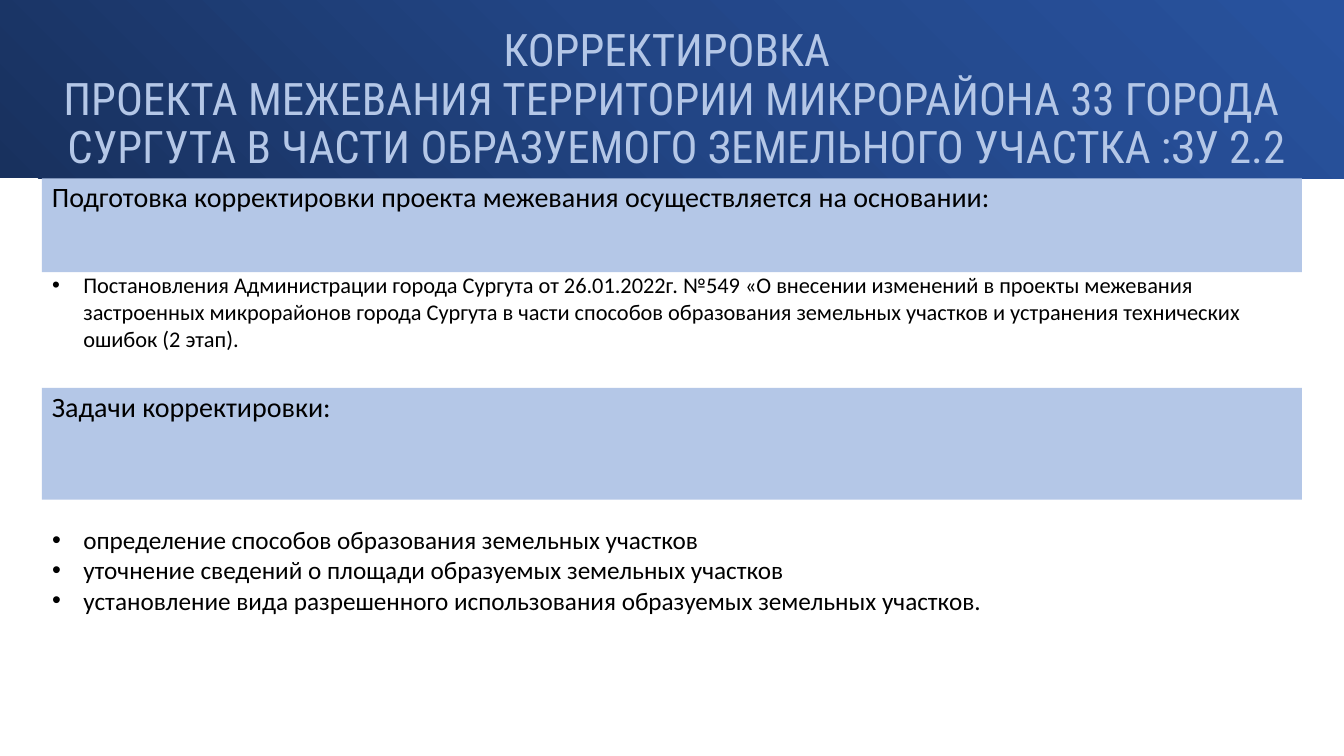
from copy import deepcopy

from pptx import Presentation
from pptx.dml.color import RGBColor
from pptx.enum.shapes import MSO_SHAPE
from pptx.enum.text import MSO_ANCHOR, MSO_AUTO_SIZE, PP_ALIGN
from pptx.util import Inches, Pt

RECT = MSO_SHAPE.RECTANGLE
TOP, BOTTOM = MSO_ANCHOR.TOP, MSO_ANCHOR.BOTTOM
LEFT, CENTER = PP_ALIGN.LEFT, PP_ALIGN.CENTER
FIXED, GROW = MSO_AUTO_SIZE.NONE, MSO_AUTO_SIZE.SHAPE_TO_FIT_TEXT

COLS, ROWS = 32, 100
INDENT = Inches(0.31)
HEX = {"dark": "18315E", "mid": "224585", "light": "28529E",
       "pale": "B4C7E7", "ink": "000000"}

# Format values for each kind of text
HEAD = {"frame": {"vertical_anchor": BOTTOM, "auto_size": FIXED},
        "para": {"alignment": CENTER, "line_spacing": 0.9},
        "font": {"name": "Roboto Condensed", "size": Pt(32)}, "color": "pale"}
BAR = {"frame": {"vertical_anchor": TOP, "auto_size": FIXED},
       "para": {"alignment": LEFT, "line_spacing": 0.9, "space_before": Pt(10)},
       "font": {"name": "Calibri", "size": Pt(20)}, "color": "ink"}
LIST = {"frame": {"vertical_anchor": TOP, "auto_size": GROW},
        "para": {"alignment": LEFT, "line_spacing": 1.0, "space_before": Pt(0)},
        "font": {"name": "Calibri"}, "color": "ink"}


def apply(obj, values):
    for key, value in values.items():
        setattr(obj, key, value)


def rgb(name):
    return RGBColor.from_string(HEX[name])


class Deck:
    def __init__(self):
        self.prs = Presentation()
        self.prs.slide_width = Inches(13.33)
        self.prs.slide_height = Inches(7.5)
        self.col = self.prs.slide_width / COLS
        self.row = self.prs.slide_height / ROWS
        self.slide = self.prs.slides.add_slide(self.prs.slide_layouts[3])
        self.title, *self.bodies = self.slide.placeholders

    def box(self, x, y, w, h):
        return (int(x * self.col), int(y * self.row),
                int(w * self.col), int(h * self.row))

    def place(self, shape, cells):
        sides = ("left", "top", "width", "height")
        apply(shape, dict(zip(sides, self.box(*cells))))
        # Stack in the order of placing
        self.slide.shapes._spTree.append(shape._element)

    def text(self, shape, words, style):
        frame = shape.text_frame
        frame.text = words
        frame.word_wrap = True
        apply(frame, style["frame"])
        for para in frame.paragraphs:
            apply(para, style["para"])
            for run in para.runs:
                apply(run.font, style["font"])
                run.font.color.rgb = rgb(style["color"])

    def head(self, cells, words, colors):
        self.place(self.title, cells)
        self.text(self.title, words, HEAD)
        fill = self.title.fill
        fill.gradient()
        fill.gradient_angle = 45
        # A third stop between the two default ones
        first = self.title._element.spPr.xpath(".//a:gs")[0]
        first.addnext(deepcopy(first))
        for i, (stop, name) in enumerate(zip(fill.gradient_stops, colors)):
            stop.position = i / 2
            stop.color.rgb = rgb(name)

    def bar(self, cells, words):
        shape = self.slide.shapes.add_shape(RECT, *self.box(*cells))
        shape.shadow.inherit = False
        shape.fill.solid()
        shape.fill.fore_color.rgb = rgb("pale")
        shape.line.fill.background()
        self.text(shape, words, BAR)

    def list(self, cells, items, size):
        body = self.bodies.pop(0)
        self.place(body, cells)
        self.text(body, "\n".join(items), LIST)
        for para in body.text_frame.paragraphs:
            para.font.size = Pt(size)
            for run in para.runs:
                run.font.size = Pt(size)
            props = para._p.get_or_add_pPr()
            props.set("marL", str(INDENT))
            props.set("indent", str(-INDENT))


def main():
    deck = Deck()

    # Title band
    deck.head((0, 0, COLS, 23.6),
              "КОРРЕКТИРОВКА \vПРОЕКТА МЕЖЕВАНИЯ ТЕРРИТОРИИ МИКРОРАЙОНА 33 ГОРОДА"
              "\v СУРГУТА В ЧАСТИ ОБРАЗУЕМОГО ЗЕМЕЛЬНОГО УЧАСТКА :ЗУ 2.2",
              ("dark", "mid", "light"))

    # Grounds
    deck.bar((1, 23.6, 30, 12.4),
             "Подготовка корректировки проекта межевания осуществляется на основании:")
    deck.list((1, 35.2, 30, 16.1), [
        "Постановления Администрации города Сургута от 26.01.2022г. №549 "
        "«О внесении изменений в проекты межевания застроенных микрорайонов "
        "города Сургута в части способов образования земельных участков "
        "и устранения технических ошибок (2 этап)."], 16)

    # Tasks
    deck.bar((1, 51.3, 30, 14.8), "Задачи корректировки:")
    deck.list((1, 68.7, 30, 13.5), [
        "определение способов образования земельных участков",
        "уточнение сведений о площади образуемых земельных участков",
        "установление вида разрешенного использования образуемых земельных участков."],
        18)

    deck.prs.save("out.pptx")


if __name__ == "__main__":
    main()
